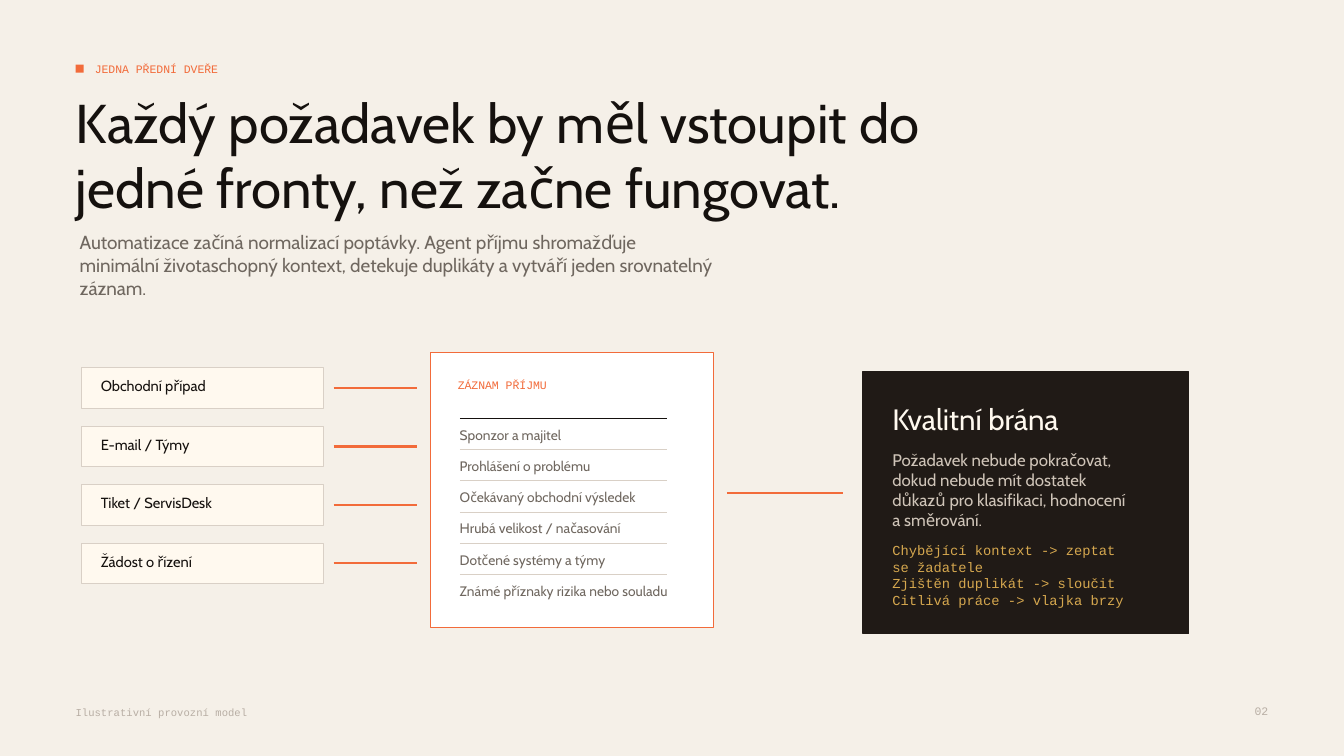
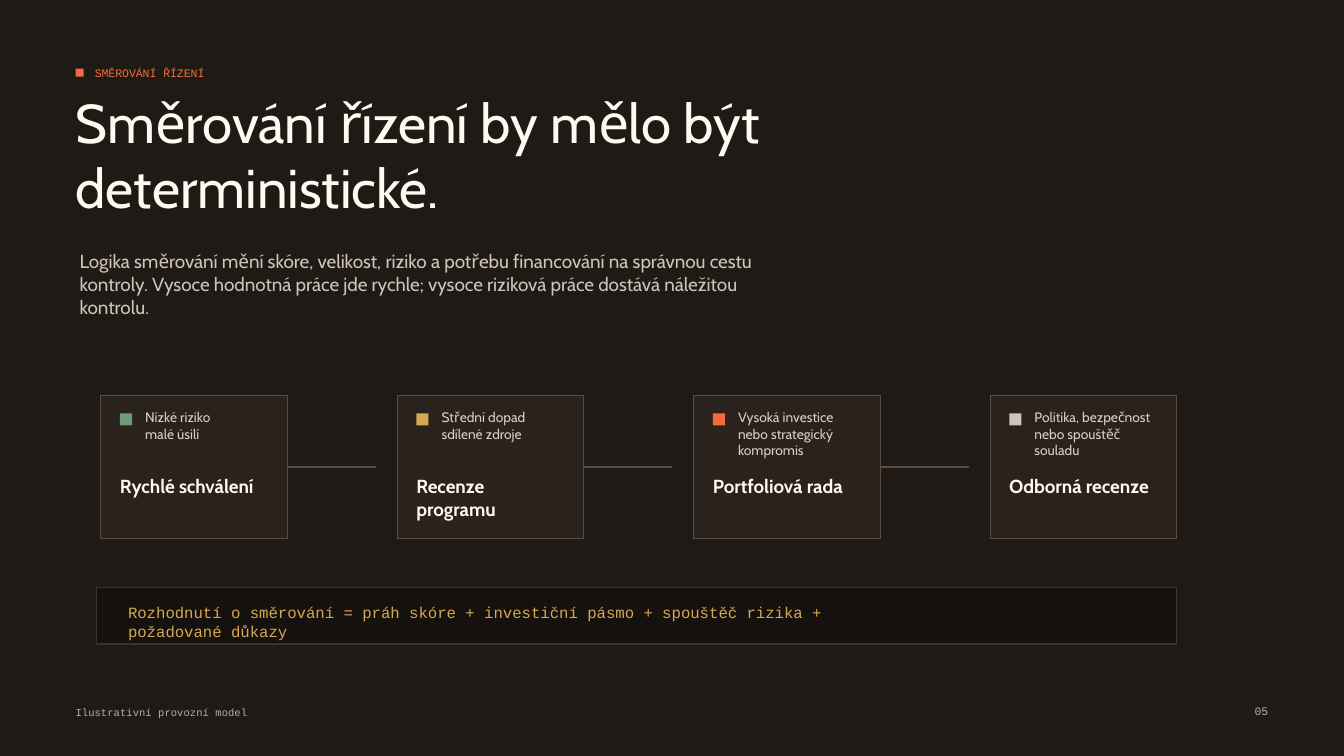
from lxml import etree
from pptx import Presentation
from pptx.dml.color import RGBColor
from pptx.enum.shapes import MSO_CONNECTOR, MSO_SHAPE
from pptx.enum.text import MSO_ANCHOR as ANCHOR, MSO_AUTO_SIZE as AUTO_SIZE, PP_ALIGN as ALIGN
from pptx.oxml.ns import qn
from pptx.util import Inches, Pt

INK = RGBColor(0x15, 0x11, 0x0E)
DARK = RGBColor(0x20, 0x1A, 0x16)
PAPER = RGBColor(0xF5, 0xF0, 0xE8)
CREAM = RGBColor(0xFF, 0xF9, 0xEF)
WHITE = RGBColor(0xFF, 0xFF, 0xFF)
ORANGE = RGBColor(0xF2, 0x6B, 0x3A)
GOLD = RGBColor(0xD6, 0xA8, 0x4F)
GREEN = RGBColor(0x6E, 0x9B, 0x78)
SAND = RGBColor(0xCF, 0xC4, 0xB8)
LIGHT_SAND = RGBColor(0xD9, 0xCF, 0xC4)
RULE = RGBColor(0xD9, 0xD0, 0xC6)
GRAY = RGBColor(0x6F, 0x67, 0x5F)
FOOTER = RGBColor(0xB8, 0xAE, 0xA4)
CARD = RGBColor(0x2A, 0x22, 0x1D)
BROWN = RGBColor(0x5B, 0x4D, 0x44)
BAR_EDGE = RGBColor(0x3C, 0x33, 0x2D)
SANS, MONO = "Cabin", "Courier New"


def write(shape, lines, size, color, font=SANS, bold=False, align=ALIGN.LEFT,
          anchor=ANCHOR.TOP, left=0, top=0):
    """Fill a shape with one paragraph per line."""
    frame = shape.text_frame
    frame.word_wrap = True
    frame.auto_size = AUTO_SIZE.NONE
    frame.vertical_anchor = anchor
    frame.margin_left, frame.margin_top = Inches(left), Inches(top)
    frame.margin_right = frame.margin_bottom = 0
    for i, line in enumerate(lines):
        paragraph = frame.add_paragraph() if i else frame.paragraphs[0]
        paragraph.alignment = align
        paragraph.space_before = Pt(0)
        run = paragraph.add_run()
        run.text = line
        run.font.name, run.font.size, run.font.bold = font, Pt(size), bold
        run.font.color.rgb = color


def add_box(slide, place, fill, edge=None):
    """Add a flat rectangle, with a thin edge if a colour is given."""
    box = slide.shapes.add_shape(MSO_SHAPE.RECTANGLE, *map(Inches, place))
    box.shadow.inherit = False
    box.fill.solid()
    box.fill.fore_color.rgb = fill
    if edge is None:
        box.line.fill.background()
    else:
        box.line.color.rgb = edge
        box.line.width = Pt(0.75)
    return box


prs = Presentation()
prs.slide_width, prs.slide_height = Inches(13.33), Inches(7.5)

# Shared frame: background, kicker, title, lede and footer
frames = [
    dict(number="02", back=PAPER, ink=INK, muted=GRAY, kicker="JEDNA PŘEDNÍ DVEŘE", kicker_top=0.56,
         title="Každý požadavek by měl vstoupit do jedné fronty, než začne fungovat.", title_width=8.54,
         lede="Automatizace začíná normalizací poptávky. Agent příjmu shromažďuje minimální "
              "životaschopný kontext, detekuje duplikáty a vytváří jeden srovnatelný záznam.",
         lede_place=(0.79, 2.29, 6.35, 0.75)),
    dict(number="05", back=DARK, ink=CREAM, muted=SAND, kicker="SMĚROVÁNÍ ŘÍZENÍ", kicker_top=0.6,
         title="Směrování řízení by mělo být deterministické.", title_width=8.23,
         lede="Logika směrování mění skóre, velikost, riziko a potřebu financování na správnou cestu "
              "kontroly. Vysoce hodnotná práce jde rychle; vysoce riziková práce dostává náležitou kontrolu.",
         lede_place=(0.79, 2.48, 6.88, 0.79)),
]
slides = []
for f in frames:
    slide = prs.slides.add_slide(prs.slide_layouts[1])
    slides.append(slide)
    slide.background.fill.solid()
    slide.background.fill.fore_color.rgb = f["back"]

    title, lede = slide.placeholders
    for holder, place in ((title, (0.75, 0.88, f["title_width"], 1.38)), (lede, f["lede_place"])):
        holder.left, holder.top, holder.width, holder.height = map(Inches, place)
    lede_props = lede.text_frame.paragraphs[0]._p.get_or_add_pPr()
    lede_props.set("marL", "0")
    lede_props.set("indent", "0")
    etree.SubElement(lede_props, qn("a:buNone"))
    write(title, [f["title"]], 39, f["ink"])
    write(lede, [f["lede"]], 13.5, f["muted"])

    add_box(slide, (0.75, f["kicker_top"] + 0.08, 0.08, 0.08), ORANGE)
    kicker = slide.shapes.add_textbox(*map(Inches, (0.94, f["kicker_top"], 4.38, 0.25)))
    write(kicker, [f["kicker"]], 8.2, ORANGE, MONO, anchor=ANCHOR.MIDDLE)
    footer = slide.shapes.add_textbox(*map(Inches, (0.75, 7, 3.33, 0.19)))
    write(footer, ["Ilustrativní provozní model"], 7.5, FOOTER, MONO)
    number = slide.shapes.add_textbox(*map(Inches, (12.08, 6.98, 0.5, 0.21)))
    write(number, [f["number"]], 8.2, FOOTER, MONO, align=ALIGN.RIGHT)

intake, routing = slides
strokes = []  # slide, left, right, y, colour, width, box it starts from

# Intake: request sources
sources = ["Obchodní případ", "E-mail / Týmy", "Tiket / ServisDesk", "Žádost o řízení"]
for i, source in enumerate(sources):
    top = 3.65 + 0.58 * i
    source_box = add_box(intake, (0.81, top, 2.4, 0.4), CREAM, RULE)
    write(source_box, [source], 10.5, INK, left=0.19, top=0.09)
    strokes.append((intake, 3.31, 4.14, top + 0.2, ORANGE, 1.5, None))

# Intake: record with ruled fields
add_box(intake, (4.27, 3.5, 2.81, 2.73), WHITE, ORANGE)
record_label = intake.shapes.add_textbox(*map(Inches, (4.54, 3.75, 1.98, 0.19)))
write(record_label, ["ZÁZNAM PŘÍJMU"], 8.2, ORANGE, MONO)
fields = ["Sponzor a majitel", "Prohlášení o problému", "Očekávaný obchodní výsledek",
          "Hrubá velikost / načasování", "Dotčené systémy a týmy",
          "Známé příznaky rizika nebo souladu"]
for i, field in enumerate(fields):
    top = 4.15 + 0.31 * i
    strokes.append((intake, 4.56, 6.62, top, RULE if i else INK, 0.75, None))
    field_text = intake.shapes.add_textbox(*map(Inches, (4.56, top + 0.08, 2.14, 0.19)))
    write(field_text, [field], 9.8, GRAY)
strokes.append((intake, 7.21, 8.36, 4.89, ORANGE, 1.5, None))

# Intake: quality gate
add_box(intake, (8.56, 3.69, 3.23, 2.6), DARK, DARK)
gate_texts = [
    (3.98, 0.4, ["Kvalitní brána"], 21, CREAM, SANS),
    (4.46, 0.88, ["Požadavek nebude pokračovat, dokud nebude mít dostatek důkazů pro "
                  "klasifikaci, hodnocení a směrování."], 12, SAND, SANS),
    (5.38, 0.73, ["Chybějící kontext -> zeptat se žadatele", "Zjištěn duplikát -> sloučit",
                  "Citlivá práce -> vlajka brzy"], 9.8, GOLD, MONO),
]
for top, height, lines, size, color, font in gate_texts:
    gate_text = intake.shapes.add_textbox(*map(Inches, (8.85, top, 2.4, height)))
    write(gate_text, lines, size, color, font)

# Routing: one card per route
routes = [
    (GREEN, ["Nízké riziko", "malé úsilí"], "Rychlé schválení"),
    (GOLD, ["Střední dopad", "sdílené zdroje"], "Recenze programu"),
    (ORANGE, ["Vysoká investice", "nebo strategický kompromis"], "Portfoliová rada"),
    (SAND, ["Politika, bezpečnost", "nebo spouštěč souladu"], "Odborná recenze"),
]
for i, (color, criteria, route) in enumerate(routes):
    left = 1 + 2.94 * i
    card = add_box(routing, (left, 3.92, 1.85, 1.42), CARD, BROWN)
    add_box(routing, (left + 0.19, 4.1, 0.12, 0.12), color)
    criteria_text = routing.shapes.add_textbox(*map(Inches, (left + 0.44, 4.06, 1.17, 0.5)))
    write(criteria_text, criteria, 9.8, LIGHT_SAND)
    route_name = routing.shapes.add_textbox(*map(Inches, (left + 0.19, 4.71, 1.46, 0.44)))
    write(route_name, [route], 13.5, CREAM, bold=True)
    if i < len(routes) - 1:
        strokes.append((routing, left + 1.85, left + 2.73, 4.63, BROWN, 1.5, card))

# Routing: decision formula
add_box(routing, (0.96, 5.83, 10.71, 0.56), INK, BAR_EDGE)
formula = routing.shapes.add_textbox(*map(Inches, (1.27, 5.98, 7.5, 0.27)))
write(formula, ["Rozhodnutí o směrování = práh skóre + investiční pásmo + spouštěč rizika + "
                "požadované důkazy"], 11.2, GOLD, MONO)

# Lines of both slides
for slide, left, right, y, color, width, start in strokes:
    stroke = slide.shapes.add_connector(MSO_CONNECTOR.STRAIGHT, *map(Inches, (left, y, right, y)))
    stroke.line.color.rgb = color
    stroke.line.width = Pt(width)
    etree.SubElement(stroke._element.spPr, qn("a:effectLst"))
    if start is not None:
        stroke.begin_connect(start, 3)

prs.save("out.pptx")
